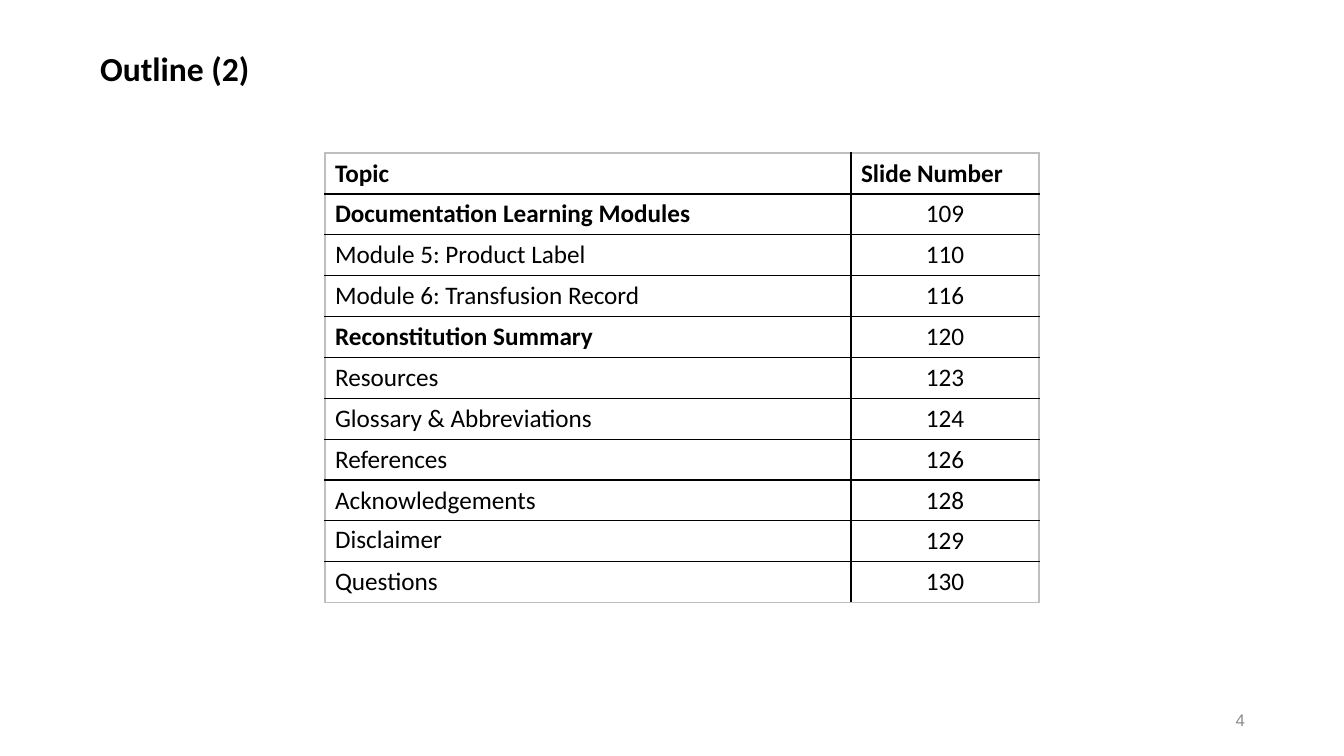
from lxml import etree
from pptx import Presentation
from pptx.dml.color import RGBColor
from pptx.enum.text import MSO_ANCHOR, PP_ALIGN
from pptx.oxml.ns import qn
from pptx.util import Pt

LEFT, CENTER, RIGHT = PP_ALIGN.LEFT, PP_ALIGN.CENTER, PP_ALIGN.RIGHT
MIDDLE = MSO_ANCHOR.MIDDLE
EMU_PER_PX = 9071.43
TITLE_ONLY = 5
COLORS = {"ink": "000000", "frame": "BFBFBF", "page_number": "8C8C8C"}

HEADER = ("Topic", "Slide Number")
TOPICS = [
    ("Documentation Learning Modules", 109),
    ("Module 5: Product Label", 110),
    ("Module 6: Transfusion Record", 116),
    ("Reconstitution Summary", 120),
    ("Resources", 123),
    ("Glossary & Abbreviations", 124),
    ("References", 126),
    ("Acknowledgements", 128),
    ("Disclaimer", 129),
    ("Questions", 130),
]
SECTIONS = {"Documentation Learning Modules", "Reconstitution Summary"}
TIGHT_TOPIC = "Disclaimer"


def px(length):
    return round(length * EMU_PER_PX)


def write(frame, text, size, color="ink", bold=False, align=LEFT, font="Calibri"):
    frame.text = text
    paragraph = frame.paragraphs[0]
    paragraph.alignment = align
    paragraph.font.name = font
    paragraph.font.size = Pt(size)
    paragraph.font.bold = bold
    paragraph.font.color.rgb = RGBColor.from_string(COLORS[color])
    return paragraph


def set_borders(cell, edges):
    """Draw the cell's edges; edges maps L, R, T, B (in that order) to (color, points)."""
    properties = cell._tc.get_or_add_tcPr()
    for side, (color, points) in edges.items():
        line = etree.SubElement(properties, qn(f"a:ln{side}"), w=str(Pt(points)))
        fill = etree.SubElement(line, qn("a:solidFill"))
        etree.SubElement(fill, qn("a:srgbClr"), val=COLORS[color])


def add_title(slide, text, left, top, width, height):
    title = slide.shapes.title
    title.left, title.top, title.width, title.height = map(px, (left, top, width, height))
    title.text_frame.vertical_anchor = MIDDLE
    write(title.text_frame, text, 24, bold=True).line_spacing = 0.9


def add_outline_table(slide, left, top, width, height, number_width):
    rows = [HEADER, *TOPICS]
    last_row = len(rows) - 1
    table = slide.shapes.add_table(
        len(rows), len(HEADER), px(left), px(top), px(width), px(height)
    ).table
    table.first_row = table.horz_banding = False
    table.columns[0].width = px(width - number_width)
    table.columns[1].width = px(number_width)

    frame, rule, header_rule = ("frame", 1), ("ink", 1), ("ink", 1.5)
    for r, (topic, number) in enumerate(rows):
        is_header = r == 0
        above = frame if is_header else header_rule if r == 1 else rule
        below = frame if r == last_row else header_rule if is_header else rule
        topic_cell, number_cell = table.cell(r, 0), table.cell(r, 1)
        set_borders(topic_cell, {"L": frame, "R": rule, "T": above, "B": below})
        set_borders(number_cell, {"L": rule, "R": frame, "T": above, "B": below})
        topic_cell.fill.background()
        number_cell.fill.background()

        label = write(topic_cell.text_frame, topic, 18, bold=is_header or topic in SECTIONS)
        if topic == TIGHT_TOPIC:
            label.line_spacing = 0.9
        write(number_cell.text_frame, str(number), 18, bold=is_header,
              align=LEFT if is_header else CENTER)


def add_page_number(slide, number, left, top, width, height):
    frame = slide.shapes.add_textbox(*map(px, (left, top, width, height))).text_frame
    frame.word_wrap = True
    frame.vertical_anchor = MIDDLE
    write(frame, str(number), 12, "page_number", align=RIGHT, font="Arial")


def main():
    presentation = Presentation()
    presentation.slide_width, presentation.slide_height = px(1344), px(756)
    slide = presentation.slides.add_slide(presentation.slide_layouts[TITLE_ONLY])
    add_title(slide, "Outline (2)", 90, 16, 873, 110)
    add_outline_table(slide, 325, 153, 714, 450, number_width=188)
    add_page_number(slide, 4, 953, 700, 302, 40)
    presentation.save("out.pptx")


if __name__ == "__main__":
    main()
